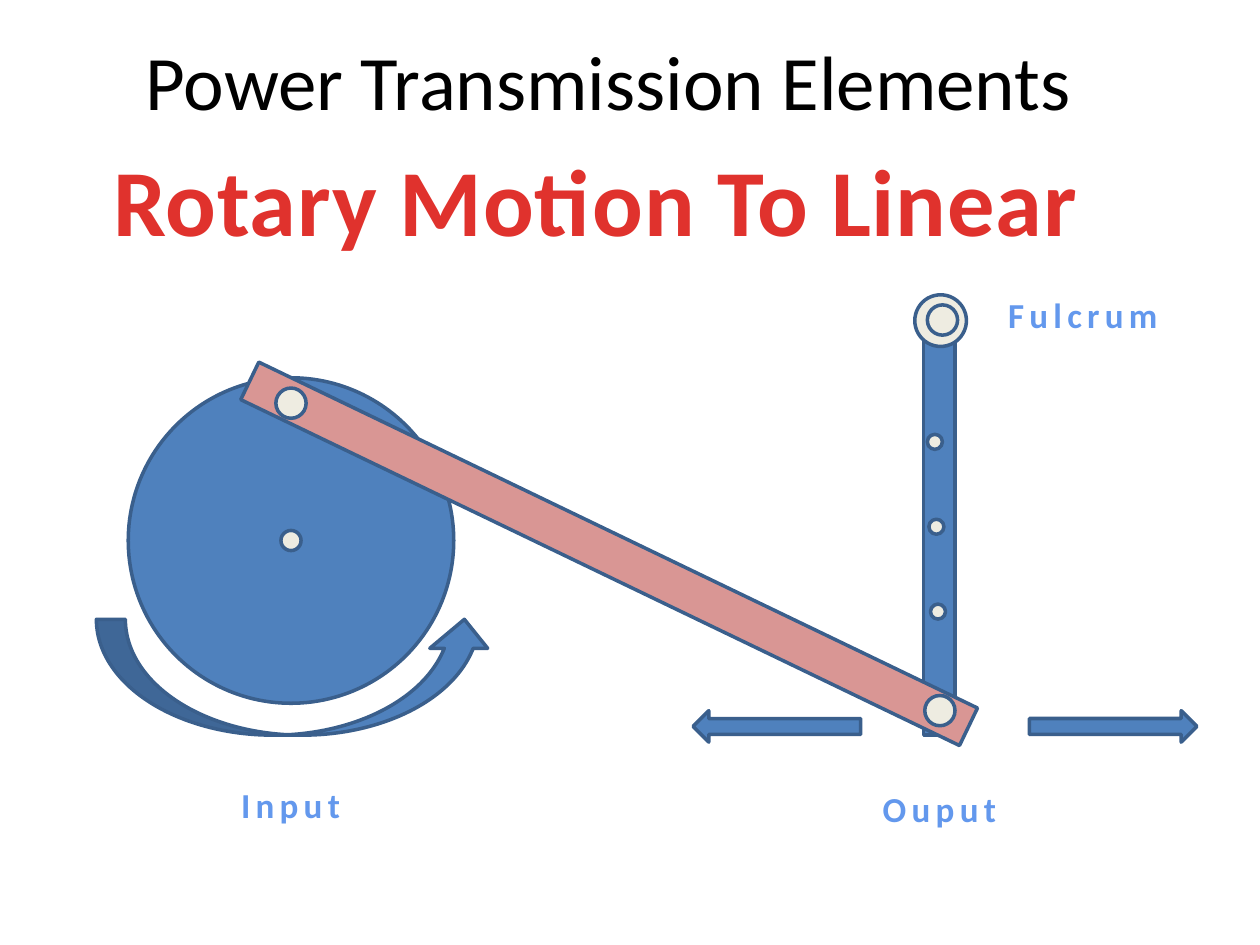
from dataclasses import dataclass

from pptx import Presentation
from pptx.dml.color import RGBColor
from pptx.enum.shapes import MSO_SHAPE
from pptx.enum.text import MSO_ANCHOR, MSO_AUTO_SIZE, PP_ALIGN
from pptx.util import Pt

HUES = {
    "steel": "4F81BD",
    "edge": "3A5F8C",
    "cream": "EEECE1",
    "rose": "D99694",
    "black": "000000",
    "red": "E0322D",
    "sky": "6398ED",
}


@dataclass
class Part:
    kind: MSO_SHAPE
    left: float
    top: float
    width: float
    height: float
    hue: str = "steel"
    turn: float = 0


@dataclass
class Label:
    text: str
    left: float
    top: float
    width: float
    height: float
    size: float = 20
    hue: str = "sky"
    bold: bool = True
    space: float = 3
    wrap: bool = True
    anchor: MSO_ANCHOR = MSO_ANCHOR.TOP
    fit: MSO_AUTO_SIZE = MSO_AUTO_SIZE.SHAPE_TO_FIT_TEXT


def color(hue: str) -> RGBColor:
    return RGBColor.from_string(HUES[hue])


def apply(target, form: dict) -> None:
    for name, value in form.items():
        setattr(target, name, value)


def disc(x: float, y: float, size: float, hue: str = "cream") -> Part:
    return Part(MSO_SHAPE.OVAL, x - size / 2, y - size / 2, size, size, hue)


def draw(slide, part: Part) -> None:
    box = map(Pt, (part.left, part.top, part.width, part.height))
    shape = slide.shapes.add_shape(part.kind, *box)
    shape.rotation = part.turn
    shape.shadow.inherit = False
    shape.fill.solid()
    shape.fill.fore_color.rgb = color(part.hue)
    shape.line.width = Pt(2)
    shape.line.color.rgb = color("edge")


def write(slide, label: Label) -> None:
    box = map(Pt, (label.left, label.top, label.width, label.height))
    frame = slide.shapes.add_textbox(*box).text_frame
    apply(frame, {
        "word_wrap": label.wrap,
        "auto_size": label.fit,
        "vertical_anchor": label.anchor,
    })
    para = frame.paragraphs[0]
    para.alignment = PP_ALIGN.CENTER
    run = para.add_run()
    run.text = label.text
    apply(run.font, {"name": "Calibri", "size": Pt(label.size), "bold": label.bold})
    run.font.color.rgb = color(label.hue)
    run._r.get_or_add_rPr().set("spc", str(round(label.space * 100)))


WHEEL = (166.3, 308.9)
PIN = 17.3

PARTS = [
    Part(MSO_SHAPE.CURVED_RIGHT_ARROW, 135.4, 273.6, 66.2, 226.8, turn=270),
    disc(*WHEEL, 186, "steel"),
    disc(*WHEEL, 11.5),
    Part(MSO_SHAPE.RECTANGLE, 527.8, 180, 18, 240),
    disc(537.5, 183.2, 29.5),
    Part(MSO_SHAPE.RECTANGLE, 120.2, 304.6, 455.8, 23.8, "rose", 25.7),
    disc(WHEEL[0], 230.4, PIN),
    disc(537.1, 406.1, PIN),
    disc(538.6, 182.9, PIN),
    *(disc(534.2 + 0.9 * i, 252.5 + 48.5 * i, 8.6) for i in range(3)),
    *(Part(MSO_SHAPE.RIGHT_ARROW, left, 406.1, 95.8, 18, turn=turn)
      for left, turn in ((588.2, 0), (396, 180))),
]

LABELS = [
    Label("Power Transmission Elements", 41.8, 12.2, 612, 66.2, 44, "black",
          False, 0, anchor=MSO_ANCHOR.MIDDLE, fit=MSO_AUTO_SIZE.NONE),
    Label("Rotary Motion To Linear", 54.7, 77.8, 571.7, 72.7, 54, "red",
          space=0.5, wrap=False),
    Label("Input", 121, 444.2, 90, 31.7),
    Label("Ouput", 491.8, 446.4, 90, 31.7),
    Label("Fulcrum", 559.4, 164.2, 118.8, 31.7),
]


def main() -> None:
    deck = Presentation()
    apply(deck, {"slide_width": Pt(720), "slide_height": Pt(540)})
    slide = deck.slides.add_slide(deck.slide_layouts[6])
    for part in PARTS:
        draw(slide, part)
    for label in LABELS:
        write(slide, label)
    deck.save("out.pptx")


if __name__ == "__main__":
    main()
